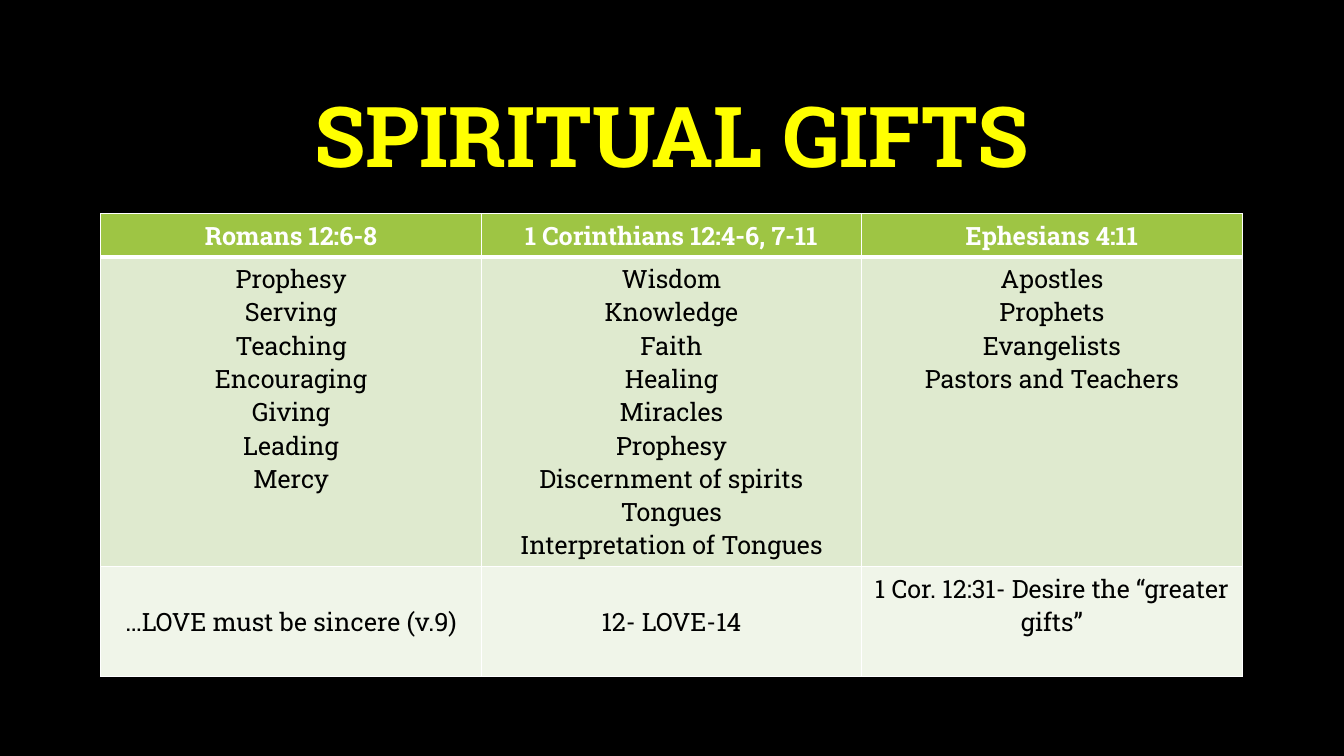
from dataclasses import dataclass

from lxml import etree
from pptx import Presentation
from pptx import util as u
from pptx.dml.color import RGBColor
from pptx.enum import text
from pptx.oxml import ns


@dataclass(frozen=True)
class Theme:
    font: str = "Roboto Slab"
    back: str = "000000"
    title: str = "FFFF00"
    head: str = "9EC544"
    body: str = "DFEACF"
    foot: str = "F0F5E9"
    light: str = "FFFFFF"
    dark: str = "000000"
    big: int = 60
    small: int = 18
    thin: int = 1
    thick: int = 3


THEME = Theme()
LINE = 0.33
HEADS = ["Romans 12:6-8", "1 Corinthians 12:4-6, 7-11", "Ephesians 4:11"]
GIFTS = [
    ["Prophesy", "Serving", "Teaching", "Encouraging", "Giving", "Leading", "Mercy"],
    ["Wisdom", "Knowledge", "Faith", "Healing", "Miracles", "Prophesy",
     "Discernment of spirits", "Tongues", "Interpretation of Tongues"],
    ["Apostles", "Prophets", "Evangelists", "Pastors and Teachers"],
]
NOTES = ["…LOVE must be sincere (v.9)", "12- LOVE-14",
         "1 Cor. 12:31- Desire the “greater gifts”"]


def write(frame, lines, size, color, bold=False):
    for i, line in enumerate(lines):
        para = frame.paragraphs[0] if i == 0 else frame.add_paragraph()
        para.alignment = text.PP_ALIGN.CENTER
        run = para.add_run()
        run.text = line
        font = run.font
        font.name, font.size, font.bold = THEME.font, u.Pt(size), bold
        font.color.rgb = RGBColor.from_string(color)


def border(cell, side, width):
    props = cell._tc.get_or_add_tcPr()
    line = etree.SubElement(props, ns.qn("a:ln" + side), w=str(u.Pt(width)))
    fill = etree.SubElement(line, ns.qn("a:solidFill"))
    etree.SubElement(fill, ns.qn("a:srgbClr"), val=THEME.light)


def heading(slide, left, top, width, height):
    title = slide.shapes.title
    title.left, title.top = u.Inches(left), u.Inches(top)
    title.width, title.height = u.Inches(width), u.Inches(height)
    frame = title.text_frame
    frame.word_wrap = True
    frame.auto_size = text.MSO_AUTO_SIZE.NONE
    frame.vertical_anchor = text.MSO_ANCHOR.MIDDLE
    write(frame, ["SPIRITUAL GIFTS"], THEME.big, THEME.title, True)
    frame.paragraphs[0].line_spacing = 0.9


def gifts(slide, left, top, width, height):
    rows = [
        (0.43, THEME.head, [[head] for head in HEADS]),
        (3.07, THEME.body, GIFTS),
        (height - 3.5, THEME.foot, [[note] for note in NOTES]),
    ]
    table = slide.shapes.add_table(
        len(rows), len(HEADS), u.Inches(left), u.Inches(top),
        u.Inches(width), u.Inches(height)).table
    for col in table.columns:
        col.width = u.Inches(width / len(HEADS))
    for r, (tall, shade, items) in enumerate(rows):
        table.rows[r].height = u.Inches(tall)
        first = r == 0
        for c, lines in enumerate(items):
            cell = table.cell(r, c)
            for side in "LRTB":
                rule = (r, side) in ((0, "B"), (1, "T"))
                border(cell, side, THEME.thick if rule else THEME.thin)
            cell.fill.solid()
            cell.fill.fore_color.rgb = RGBColor.from_string(shade)
            write(cell.text_frame, lines, THEME.small,
                  THEME.light if first else THEME.dark, first)
    for c in (0, 1):
        table.cell(2, c).margin_top = u.Inches(0.05 + LINE)


def main():
    deck = Presentation()
    deck.slide_width, deck.slide_height = u.Inches(13.33), u.Inches(7.5)
    slide = deck.slides.add_slide(deck.slide_layouts[5])
    back = slide.background.fill
    back.solid()
    back.fore_color.rgb = RGBColor.from_string(THEME.back)
    heading(slide, 1, 0.67, 11.32, 1.45)
    gifts(slide, 1, 2.12, 11.32, 4.59)
    deck.save("out.pptx")


if __name__ == "__main__":
    main()
